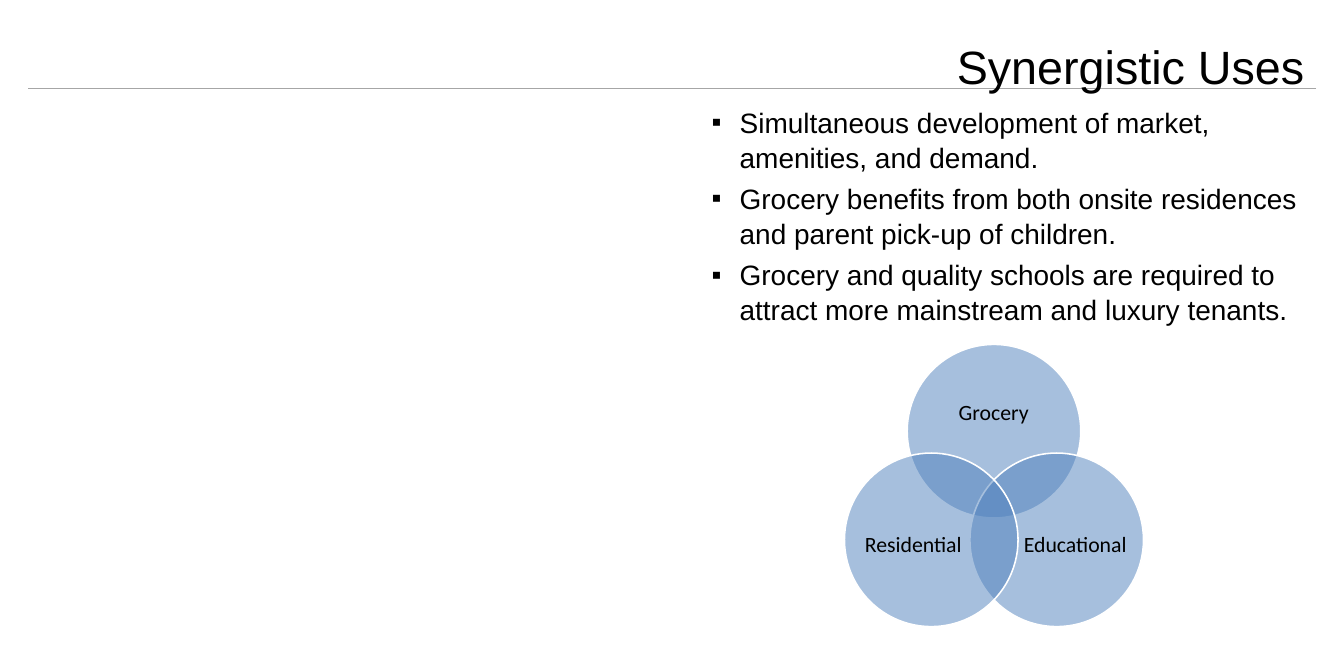
from dataclasses import dataclass

from lxml.etree import SubElement
from pptx import Presentation
from pptx.dml.color import RGBColor
from pptx.enum.shapes import MSO_CONNECTOR, MSO_SHAPE
from pptx.enum.text import MSO_ANCHOR, PP_ALIGN
from pptx.oxml.ns import qn
from pptx.util import Pt


@dataclass(frozen=True)
class Theme:
    ink: RGBColor = RGBColor(0, 0, 0)
    rule: RGBColor = RGBColor(0xA6, 0xA6, 0xA6)
    disc: RGBColor = RGBColor(0x4F, 0x81, 0xBD)
    edge: RGBColor = RGBColor(255, 255, 255)
    sans: str = "Arial"
    label: str = "Calibri"
    title_size: float = 60
    body_size: float = 36
    label_size: float = 28


class Board:
    def __init__(self, slide, theme):
        self.shapes = slide.shapes
        self.theme = theme

    def text(self, box, lines, font, size, pad=(0, 0, 0, 0),
             anchor=MSO_ANCHOR.TOP, bullet=None, **style):
        frame = self.shapes.add_textbox(*map(Pt, box)).text_frame
        left, top, right, bottom = map(Pt, pad)
        look = {"word_wrap": True, "vertical_anchor": anchor,
                "margin_left": left, "margin_top": top,
                "margin_right": right, "margin_bottom": bottom}
        for name, value in look.items():
            setattr(frame, name, value)
        for i, line in enumerate(lines):
            par = frame.add_paragraph() if i else frame.paragraphs[0]
            for name, value in style.items():
                setattr(par, name, value)
            run = par.add_run()
            run.text = line
            for name, value in {"name": font, "size": Pt(size)}.items():
                setattr(run.font, name, value)
            run.font.color.rgb = self.theme.ink
            if bullet:
                self.mark(par, bullet)

    def mark(self, par, sign):
        # Hanging bullet
        props = par._p.get_or_add_pPr()
        props.set("marL", str(Pt(36)))
        props.set("indent", str(-Pt(36)))
        SubElement(props, qn("a:buFont"), typeface=self.theme.sans)
        SubElement(props, qn("a:buChar"), char=sign)

    def rule(self, start, end):
        line = self.shapes.add_connector(
            MSO_CONNECTOR.STRAIGHT, *map(Pt, start + end))
        line.line.color.rgb = self.theme.rule
        line.line.width = Pt(0.75)
        SubElement(line._element.spPr, qn("a:effectLst"))

    def disc(self, x, y, size):
        disc = self.shapes.add_shape(
            MSO_SHAPE.OVAL, *map(Pt, (x - size / 2, y - size / 2, size, size)))
        disc.shadow.inherit = False
        disc.fill.solid()
        disc.fill.fore_color.rgb = self.theme.disc
        tint = disc._element.spPr.find(".//" + qn("a:srgbClr"))
        SubElement(tint, qn("a:alpha"), val="50000")
        disc.line.color.rgb = self.theme.edge
        disc.line.width = Pt(2)


def main():
    deck = Presentation()
    deck.slide_width, deck.slide_height = Pt(1728), Pt(864)
    theme = Theme()
    board = Board(deck.slides.add_slide(deck.slide_layouts[6]), theme)

    # Heading
    board.rule((1692, 113.76), (36, 113.76))
    board.text((900, 34.56, 792, 79.2), ["Synergistic Uses"],
               theme.sans, theme.title_size, pad=(15, 14, 15, 0),
               alignment=PP_ALIGN.RIGHT)

    # Key points
    points = [
        "Simultaneous development of market, amenities, and demand.",
        "Grocery benefits from both onsite residences and parent pick-up of children.",
        "Grocery and quality schools are required to attract more mainstream and luxury tenants.",
    ]
    board.text((900, 126, 792, 645.84), points, theme.sans, theme.body_size,
               pad=(15, 7.2, 15, 7.2), bullet="▪",
               space_before=Pt(7.2), line_spacing=1.05)

    # Venn diagram: disc centre, then label box
    uses = {
        "Grocery": ((1278, 554.4), (1195.92, 481.68, 163.44, 100.08)),
        "Educational": ((1358.64, 694.08), (1315.44, 640.08, 133.92, 122.4)),
        "Residential": ((1197.36, 694.08), (1107.36, 640.08, 133.92, 122.4)),
    }
    for name, (spot, box) in uses.items():
        board.disc(*spot, 223.2)
        board.text(box, [name], theme.label, theme.label_size,
                   anchor=MSO_ANCHOR.MIDDLE, alignment=PP_ALIGN.CENTER,
                   line_spacing=0.9, space_after=Pt(9.8))

    deck.save("out.pptx")


if __name__ == "__main__":
    main()
